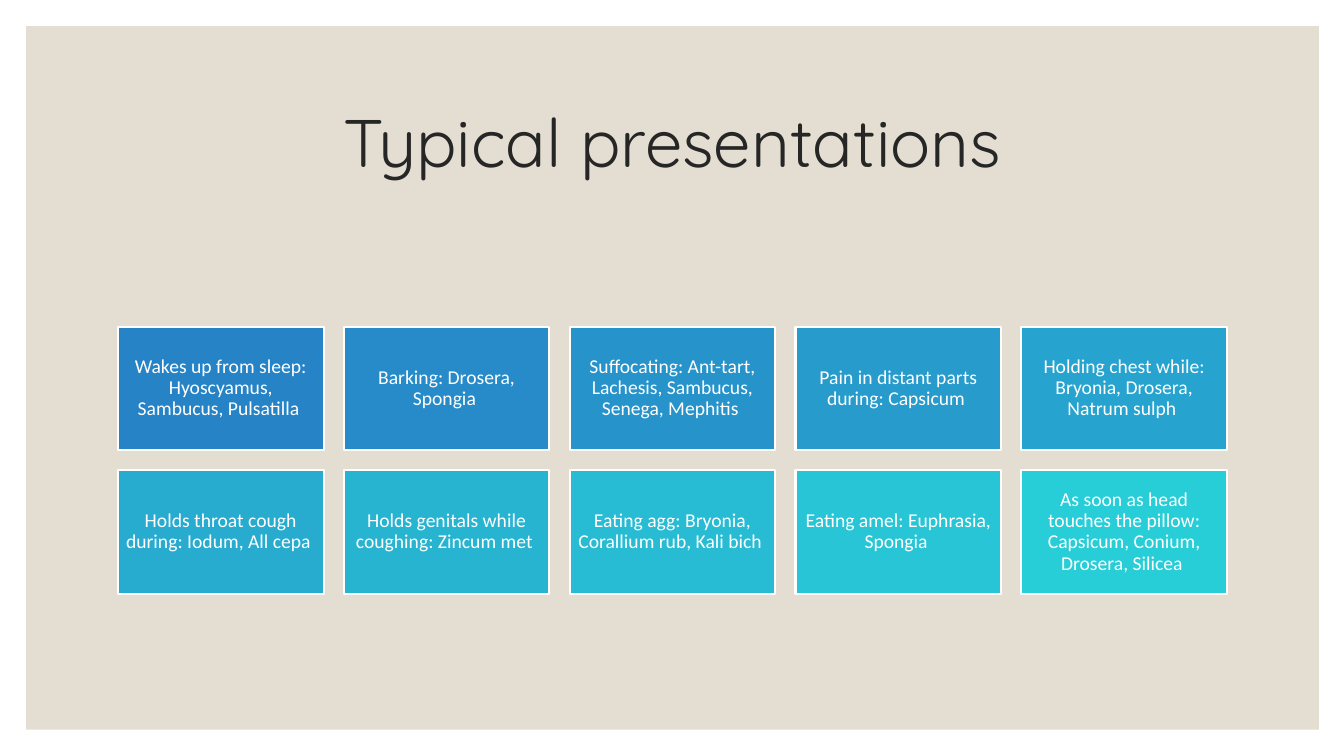
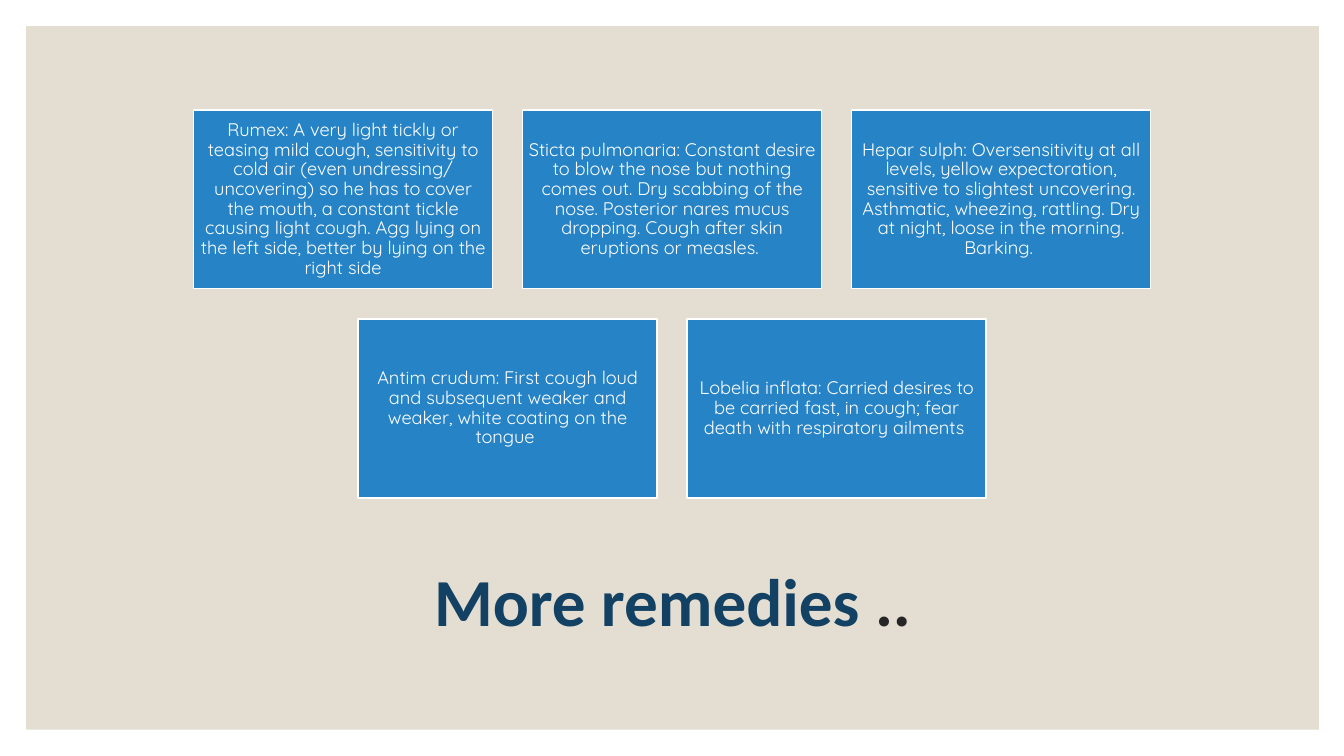
from dataclasses import dataclass

from pptx import Presentation
from pptx.dml.color import RGBColor
from pptx.enum.shapes import MSO_SHAPE
from pptx.enum.text import MSO_ANCHOR, PP_ALIGN
from pptx.util import Inches, Pt

RECTANGLE = MSO_SHAPE.RECTANGLE
MIDDLE = MSO_ANCHOR.MIDDLE
CENTER = PP_ALIGN.CENTER


@dataclass(frozen=True)
class Theme:
    panel: str = "E3DED1"
    ink: str = "262626"
    navy: str = "134163"
    white: str = "FFFFFF"
    blue: str = "2683C6"
    ramp: tuple = ("2683C6", "268BC8", "2693CA", "269BCC", "26A3CE",
                   "27ABCF", "27B4D1", "27BCD3", "27C5D5", "27CED7")
    plain_font: str = "Calibri"
    round_font: str = "Quicksand"
    title_size: int = 48
    line_spacing: float = 0.9


@dataclass(frozen=True)
class CardStyle:
    font: str
    size: int
    outline: float
    inset: float
    gap: float


THEME = Theme()
PRESENTATION_CARDS = CardStyle(THEME.plain_font, 14, 1.5, 0.06, 0.2)
REMEDY_CARDS = CardStyle(THEME.round_font, 13, 1, 0.05, 0.3)

PRESENTATIONS = [
    "Wakes up from sleep: Hyoscyamus, Sambucus, Pulsatilla ",
    "Barking: Drosera, Spongia ",
    "Suffocating: Ant-tart, Lachesis, Sambucus, Senega, Mephitis ",
    "Pain in distant parts during: Capsicum ",
    "Holding chest while: Bryonia, Drosera, Natrum sulph ",
    "Holds throat cough during: Iodum, All cepa ",
    "Holds genitals while coughing: Zincum met ",
    "Eating agg: Bryonia, Corallium rub, Kali bich ",
    "Eating amel: Euphrasia, Spongia ",
    "As soon as head touches the pillow: Capsicum, Conium, Drosera, Silicea ",
]

REMEDIES = [
    "Rumex: A very light tickly or teasing mild cough, sensitivity to cold air "
    "(even undressing/ uncovering) so he has to cover the mouth, a constant tickle "
    "causing light cough. Agg lying on the left side, better by lying on the right side",
    "Sticta pulmonaria: Constant desire to blow the nose but nothing comes out. "
    "Dry scabbing of the nose. Posterior nares mucus dropping. "
    "Cough after skin eruptions or measles. ",
    "Hepar sulph: Oversensitivity at all levels, yellow expectoration, sensitive to "
    "slightest uncovering. Asthmatic, wheezing, rattling. Dry at night, loose in the "
    "morning. Barking. ",
    "Antim crudum: First cough loud and subsequent weaker and weaker, "
    "white coating on the tongue ",
    "Lobelia inflata: Carried desires to be carried fast, in cough; "
    "fear death with respiratory ailments ",
]


def style_span(span, font, size, color, bold=False):
    span.font.name = font
    span.font.size = Pt(size)
    span.font.bold = bold
    span.font.color.rgb = RGBColor.from_string(color)


def center_text(frame):
    frame.word_wrap = True
    frame.vertical_anchor = MIDDLE
    para = frame.paragraphs[0]
    para.alignment = CENTER
    para.line_spacing = THEME.line_spacing
    return para


def add_rectangle(page, box, fill):
    rectangle = page.shapes.add_shape(RECTANGLE, *map(Inches, box))
    rectangle.shadow.inherit = False
    rectangle.fill.solid()
    rectangle.fill.fore_color.rgb = RGBColor.from_string(fill)
    rectangle.line.fill.background()
    return rectangle


def add_page(deck):
    page = deck.slides.add_slide(deck.slide_layouts[6])
    add_rectangle(page, (0.26, 0.26, 12.82, 6.98), THEME.panel)
    return page


def add_title(page, box, parts, font, bold=False):
    frame = page.shapes.add_textbox(*map(Inches, box)).text_frame
    para = center_text(frame)
    for text, color in parts:
        span = para.add_run()
        span.text = text
        style_span(span, font, THEME.title_size, color, bold)


def add_card(page, box, text, fill, style):
    card = add_rectangle(page, box, fill)
    card.line.color.rgb = RGBColor.from_string(THEME.white)
    card.line.width = Pt(style.outline)
    frame = card.text_frame
    frame.margin_left = frame.margin_right = Inches(style.inset)
    frame.margin_top = frame.margin_bottom = Inches(style.inset)
    frame.text = text
    para = center_text(frame)
    style_span(para.runs[0], style.font, style.size, THEME.white)


def add_card_grid(page, box, texts, fills, columns, style):
    left, top, width, height = box
    rows = [texts[start:start + columns] for start in range(0, len(texts), columns)]
    card_width = (width - style.gap * (columns - 1)) / columns
    card_height = (height - style.gap * (len(rows) - 1)) / len(rows)
    step_x, step_y = card_width + style.gap, card_height + style.gap
    for row, row_texts in enumerate(rows):
        row_left = left + (columns - len(row_texts)) * step_x / 2
        for column, text in enumerate(row_texts):
            card_box = (row_left + column * step_x, top + row * step_y,
                        card_width, card_height)
            add_card(page, card_box, text, fills[row * columns + column], style)


def build_presentations_page(deck):
    page = add_page(deck)
    add_title(page, (1.17, 0.7, 11, 1.5),
              [("Typical presentations", THEME.ink)], THEME.round_font)
    add_card_grid(page, (1.17, 3.24, 11, 2.65), PRESENTATIONS, THEME.ramp,
                  5, PRESENTATION_CARDS)


def build_remedies_page(deck):
    page = add_page(deck)
    add_title(page, (1.17, 5.25, 11, 1.5),
              [("More remedies ", THEME.navy), ("..", THEME.ink)],
              THEME.plain_font, bold=True)
    add_card_grid(page, (1.92, 1.09, 9.49, 3.85), REMEDIES,
                  [THEME.blue] * len(REMEDIES), 3, REMEDY_CARDS)


def main():
    deck = Presentation()
    deck.slide_width = Inches(13.33)
    deck.slide_height = Inches(7.5)
    build_presentations_page(deck)
    build_remedies_page(deck)
    deck.save("out.pptx")


if __name__ == "__main__":
    main()
